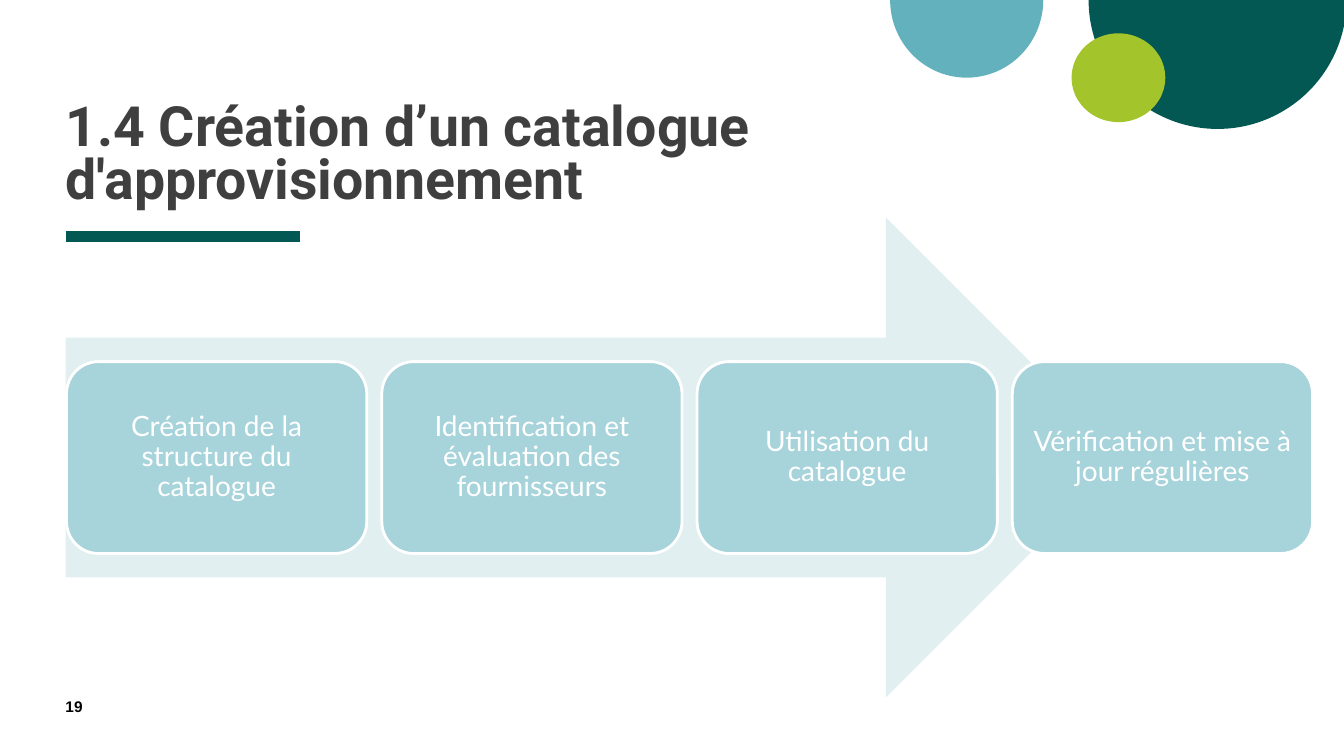
import pptx
import pptx.util
import pptx.dml.color
import pptx.enum.shapes
import pptx.enum.text
import pptx.oxml.ns
import lxml.etree
from dataclasses import dataclass

Pt = pptx.util.Pt
SHAPE = pptx.enum.shapes.MSO_SHAPE
ALIGN = pptx.enum.text.PP_ALIGN
ANCHOR = pptx.enum.text.MSO_ANCHOR

TITLE = "1.4 Création d’un catalogue d'approvisionnement"
PAGE_NUMBER = "19"
STEPS = [
    "Création de la structure du catalogue",
    "Identification et évaluation des fournisseurs",
    "Utilisation du catalogue",
    "Vérification et mise à jour régulières",
]


@dataclass(frozen=True)
class Theme:
    dark_green: str = "035854"
    teal: str = "64B1BE"
    lime: str = "A3C42A"
    arrow: str = "E1EFF1"
    step: str = "A7D3DA"
    white: str = "FFFFFF"
    heading: str = "3F3F3F"
    black: str = "000000"
    title_size: float = 39.6
    step_size: float = 20
    number_size: float = 11


THEME = Theme()
LEFT = 46.8
# kind, left, top, width, height, colour
HALF_DISCS = [
    (777.6, -92.2, 184.3, 184.3, THEME.dark_green),
    (635.8, -55.4, 109.4, 110.9, THEME.teal),
]
LIME_DISC = (765.4, 23.8, 67, 63.4)
ARROW = (LEFT, 155.5, 757.4, 342.7)
STEP_LEFT, STEP_WIDTH, STEP_GAP = 47.5, 214.5, 10.7
STEP_HEIGHT = 0.4 * ARROW[3]


def rgb(colour):
    return pptx.dml.color.RGBColor.from_string(colour)


def write(shape, text, *, font, size, colour, bold=False, align=ALIGN.LEFT,
          anchor=ANCHOR.TOP, spacing=1.0, insets=(0, 0, 0, 0)):
    """Fill a shape with one paragraph; insets run left, top, right, bottom."""
    frame = shape.text_frame
    frame.word_wrap = True
    frame.auto_size = pptx.enum.text.MSO_AUTO_SIZE.NONE
    frame.vertical_anchor = anchor
    (frame.margin_left, frame.margin_top,
     frame.margin_right, frame.margin_bottom) = map(Pt, insets)
    paragraph = frame.paragraphs[0]
    paragraph.alignment = align
    paragraph.line_spacing = spacing
    paragraph.space_before = Pt(0)
    run = paragraph.add_run()
    run.text = text
    run.font.name = font
    run.font.size = Pt(size)
    run.font.bold = bold
    run.font.color.rgb = rgb(colour)


def add_filled(slide, kind, box, fill, outline=None):
    shape = slide.shapes.add_shape(kind, *map(Pt, box))
    shape.shadow.inherit = False
    shape.fill.solid()
    shape.fill.fore_color.rgb = rgb(fill)
    if outline:
        shape.line.color.rgb = rgb(outline)
        shape.line.width = Pt(2)
    else:
        shape.line.fill.background()
    return shape


def add_decoration(slide):
    for *box, colour in HALF_DISCS:
        half_disc = add_filled(slide, SHAPE.PIE, box, colour)
        half_disc.adjustments[0] = 0
        half_disc.adjustments[1] = 108  # 180 degrees
    add_filled(slide, SHAPE.OVAL, LIME_DISC, THEME.lime)

    underline = slide.shapes.add_connector(
        pptx.enum.shapes.MSO_CONNECTOR.STRAIGHT,
        Pt(LEFT), Pt(169.2), Pt(214.6), Pt(169.2))
    underline.line.color.rgb = rgb(THEME.dark_green)
    underline.line.width = Pt(8)
    lxml.etree.SubElement(underline._element.spPr, pptx.oxml.ns.qn("a:effectLst"))


def add_steps(slide):
    add_filled(slide, SHAPE.RIGHT_ARROW, ARROW, THEME.arrow)
    top = ARROW[1] + (ARROW[3] - STEP_HEIGHT) / 2
    for index, label in enumerate(STEPS):
        left = STEP_LEFT + index * (STEP_WIDTH + STEP_GAP)
        step = add_filled(slide, SHAPE.ROUNDED_RECTANGLE,
                          (left, top, STEP_WIDTH, STEP_HEIGHT),
                          THEME.step, THEME.white)
        write(step, label, font="Lato", size=THEME.step_size, colour=THEME.white,
              align=ALIGN.CENTER, anchor=ANCHOR.MIDDLE, spacing=0.9,
              insets=(6, 6, 6, 6))


def main():
    deck = pptx.Presentation()
    deck.slide_width, deck.slide_height = Pt(960), Pt(540)
    slide = deck.slides.add_slide(deck.slide_layouts[5])

    add_decoration(slide)
    title = slide.shapes.title
    title.left, title.top, title.width, title.height = map(Pt, (LEFT, 67, 534.2, 125.3))
    write(title, TITLE, font="Roboto", size=THEME.title_size, colour=THEME.heading,
          bold=True, anchor=ANCHOR.BOTTOM, spacing=0.8, insets=(0, 0, 0, 42))
    page_number = slide.shapes.add_textbox(*map(Pt, (LEFT, 498.2, 41, 19.4)))
    write(page_number, PAGE_NUMBER, font="Arial", size=THEME.number_size,
          colour=THEME.black, bold=True)
    add_steps(slide)

    deck.save("out.pptx")


if __name__ == "__main__":
    main()
